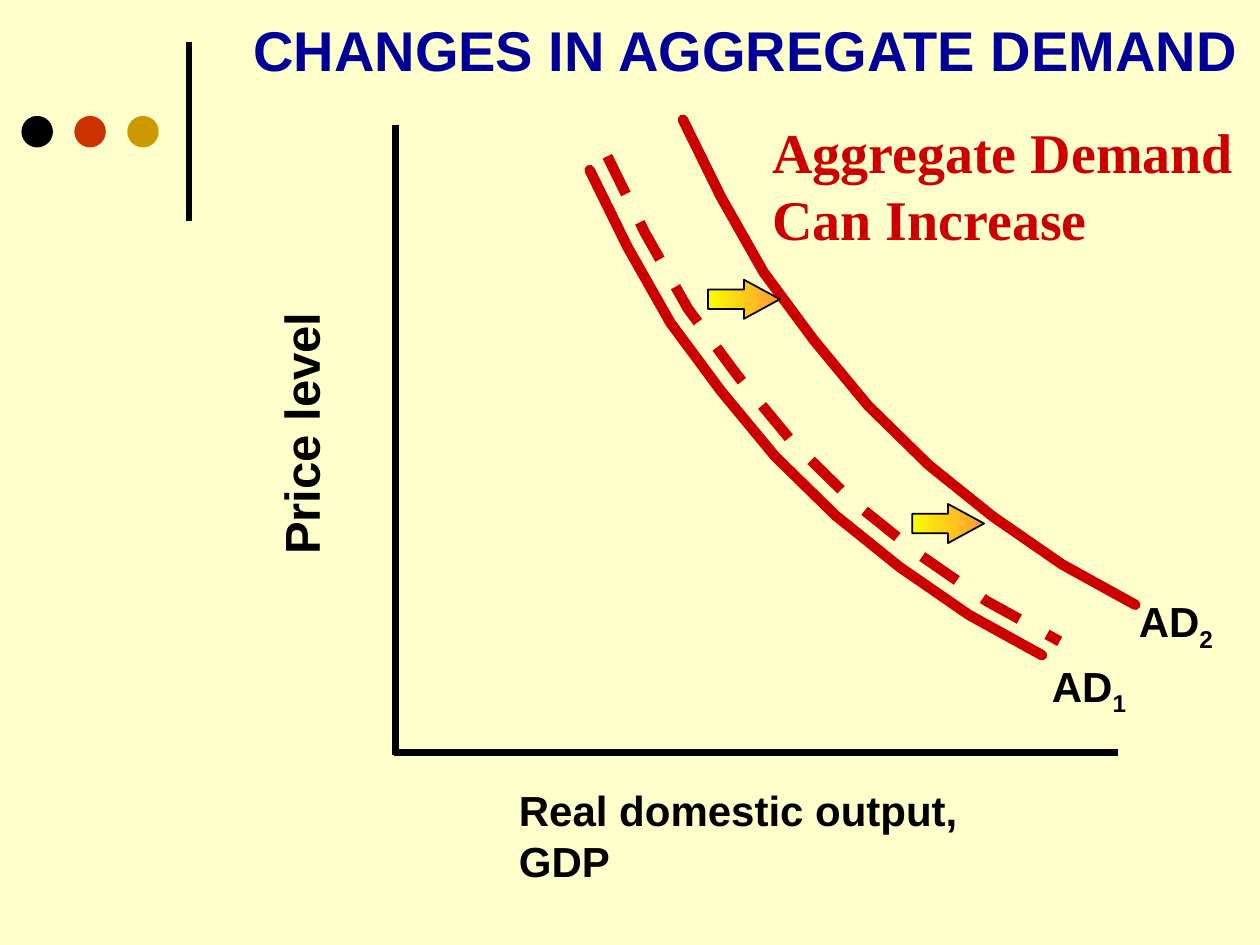
"""Build a slide on a rise in aggregate demand."""
from pptx import Presentation
from pptx import util as u
from pptx.dml.color import RGBColor
from pptx.enum import dml, shapes, text
from pptx.oxml import ns, xmlchemy

Inches = u.Inches


def paint(hue):
    return RGBColor.from_string(hue)


def write(box, words, size=24, font="Arial", hue="000000", sub="", wrap=False):
    frame = box.text_frame
    frame.word_wrap = wrap
    frame.auto_size = text.MSO_AUTO_SIZE.NONE
    frame.vertical_anchor = text.MSO_ANCHOR.TOP
    for num, line in enumerate(words.split("\n")):
        para = frame.add_paragraph() if num else frame.paragraphs[0]
        para.alignment = text.PP_ALIGN.LEFT
        for part in filter(None, (line, sub)):
            run = para.add_run()
            run.text = part
            run.font.name = font
            run.font.size = u.Pt(size)
            run.font.bold = True
            run.font.color.rgb = paint(hue)
            if part == sub:
                run.font._element.set("baseline", "-25000")


deck = Presentation()
deck.slide_width, deck.slide_height = Inches(10), Inches(7.5)
slide = deck.slides.add_slide(deck.slide_layouts[5])
slide.background.fill.solid()
slide.background.fill.fore_color.rgb = paint("FFFFCC")
items = slide.shapes

title = items.title
title.left, title.top = Inches(1.91), Inches(0.07)
title.width, title.height = Inches(8.05), Inches(0.63)
write(title, "CHANGES IN AGGREGATE DEMAND", size=32, hue="000099")

for num, hue in enumerate(("000000", "CC3300", "CC9900")):
    dot = items.add_shape(
        shapes.MSO_SHAPE.OVAL, Inches(0.17 + 0.42 * num), Inches(0.92),
        Inches(0.25), Inches(0.25))
    dot.shadow.inherit = False
    dot.fill.solid()
    dot.fill.fore_color.rgb = paint(hue)
    dot.line.fill.background()

rules = ((1.5, 1.75, 1.5, 0.33, 3), (3.14, 0.99, 3.14, 5.99, 4),
         (3.13, 5.97, 8.87, 5.97, 4))
for *ends, width in rules:
    rule = items.add_connector(
        shapes.MSO_CONNECTOR.STRAIGHT, *(Inches(end) for end in ends))
    rule.line.color.rgb = paint("000000")
    rule.line.width = u.Pt(width)
    rule.element.spPr.append(xmlchemy.OxmlElement("a:effectLst"))

bend = ((0, 0), (0.3, 0.61), (0.64, 1.21), (1.04, 1.75), (1.47, 2.27),
        (1.95, 2.74), (2.46, 3.15), (3.01, 3.53), (3.59, 3.85))
for left, top, dash in ((4.68, 1.35, False), (5.42, 0.95, False), (4.82, 1.24, True)):
    spots = [(Inches(left + x), Inches(top + y)) for x, y in bend]
    path = items.build_freeform(*spots[0])
    path.add_line_segments(spots[1:], close=False)
    curve = path.convert_to_shape()
    curve.shadow.inherit = False
    curve.fill.background()
    curve.line.color.rgb = paint("CC0000")
    curve.line.width = u.Pt(6)
    if dash:
        curve.line.dash_style = dml.MSO_LINE.DASH
    else:
        curve.element.spPr.find(ns.qn("a:ln")).set("cap", "rnd")

for left, top in ((5.62, 2.22), (7.24, 4)):
    arrow = items.add_shape(
        shapes.MSO_SHAPE.RIGHT_ARROW, Inches(left), Inches(top),
        Inches(0.57), Inches(0.31))
    arrow.shadow.inherit = False
    arrow.adjustments[0], arrow.adjustments[1] = 0.5, 0.92
    arrow.fill.gradient()
    arrow.fill.gradient_angle = 0
    for stop, hue in zip(arrow.fill.gradient_stops, ("FAFD00", "FF9933")):
        stop.color.rgb = paint(hue)
    arrow.line.color.rgb = paint("000000")
    arrow.line.width = u.Pt(1)

labels = (
    (1.32, 3.16, 2.12, 0.56, 270, "Price level", dict(size=28)),
    (4.02, 6.18, 4.4, 0.9, 0, "Real domestic output, GDP", dict(wrap=True)),
    (8.25, 5.19, 0.8, 0.5, 0, "AD", dict(sub="1")),
    (8.94, 4.68, 0.8, 0.5, 0, "AD", dict(sub="2")),
    (6.03, 0.88, 3.87, 1.17, 0, "Aggregate Demand\nCan Increase",
     dict(size=32, font="Times New Roman", hue="CC0000")),
)
for *place, turn, words, style in labels:
    box = items.add_textbox(*(Inches(side) for side in place))
    box.rotation = turn
    write(box, words, **style)

deck.save("out.pptx")
